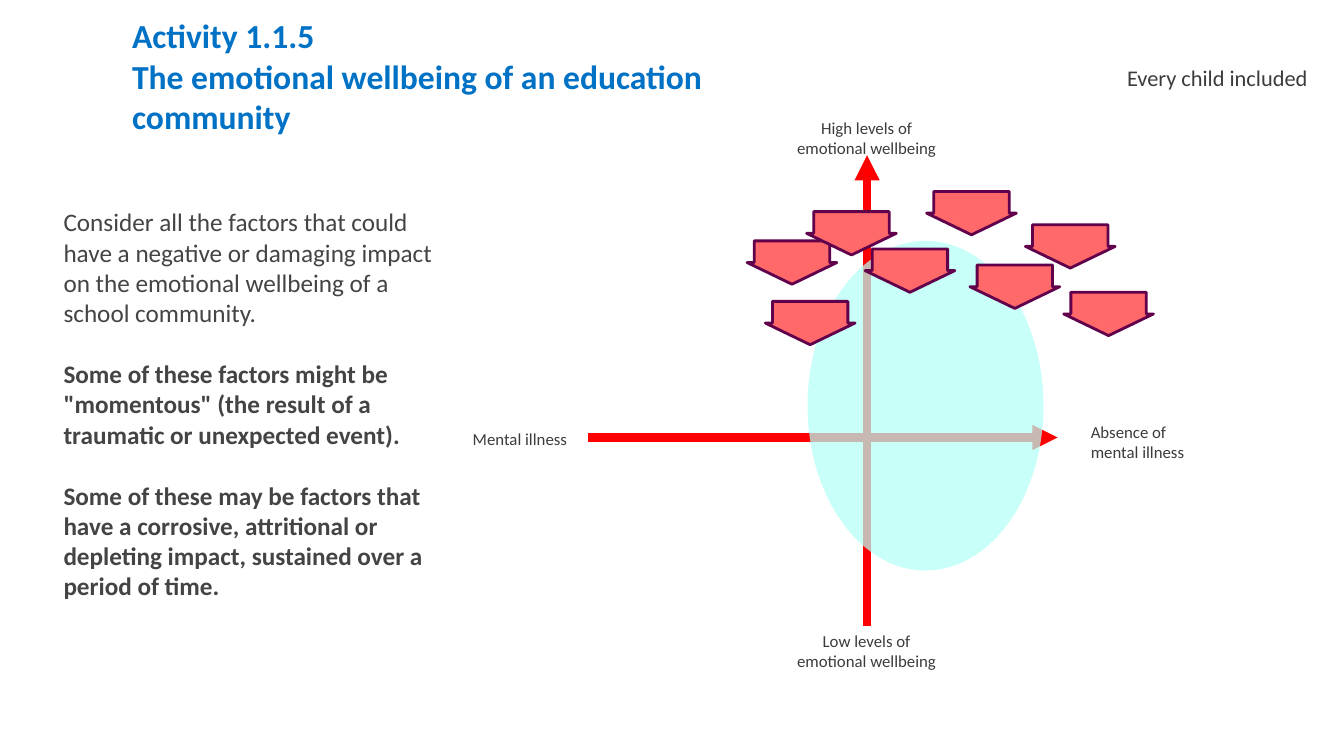
from dataclasses import dataclass

from lxml import etree
from pptx import Presentation
from pptx.dml.color import RGBColor
from pptx.enum.shapes import MSO_CONNECTOR as Connector, MSO_SHAPE as Preset
from pptx.enum.text import MSO_ANCHOR as Anchor, MSO_AUTO_SIZE as AutoSize, PP_ALIGN as Align
from pptx.oxml.ns import qn
from pptx.util import Inches, Pt

BLUE = RGBColor(0x00, 0x72, 0xC6)
DARK = RGBColor(0x3C, 0x3C, 0x3C)
GREY = RGBColor(0x44, 0x44, 0x44)
RED = RGBColor(0xFF, 0x00, 0x00)
AQUA = RGBColor(0xB4, 0xFF, 0xF8)
CORAL = RGBColor(0xFF, 0x69, 0x69)
PLUM = RGBColor(0x61, 0x00, 0x4B)


@dataclass
class Box:
    left: float
    top: float
    width: float
    height: float

    def lengths(self) -> list:
        return [Inches(n) for n in (self.left, self.top, self.width, self.height)]


@dataclass
class Label:
    text: str
    box: Box
    size: int = 12
    align: Align = Align.LEFT


@dataclass
class Axis:
    start: tuple[float, float]
    end: tuple[float, float]


LABELS = [
    Label("Every child included", Box(11.08, 0.59, 2.25, 0.37), 16),
    Label("Mental illness", Box(4.59, 4.2, 1.45, 0.3)),
    Label("Absence of mental illness", Box(10.72, 4.13, 1.45, 0.5)),
    Label("High levels of emotional wellbeing", Box(7.77, 1.12, 1.65, 0.5), align=Align.CENTER),
    Label("Low levels of emotional wellbeing", Box(7.77, 6.21, 1.65, 0.5), align=Align.CENTER),
]
AXES = [Axis((8.6, 6.21), (8.6, 1.54)), Axis((5.83, 4.34), (10.49, 4.34))]
PRESSURES = [(7.41, 2.39), (8, 2.1), (8.58, 2.47), (9.19, 1.9),
             (9.62, 2.63), (7.59, 2.99), (10.17, 2.23), (10.55, 2.9)]
TITLE = ["Activity 1.1.5", "The emotional wellbeing of an education community"]
FACTORS = [
    "Consider all the factors that could have a negative or damaging impact on the "
    "emotional wellbeing of a school community.",
    "Some of these factors might be \"momentous\" (the result of a traumatic or unexpected event).",
    "Some of these may be factors that have a corrosive, attritional or depleting impact, "
    "sustained over a period of time.",
]


def write(shape, lines: list[str], size: int, color: RGBColor,
          bold_from: int, gap: float = 0, align: Align = Align.LEFT) -> None:
    """Fill a shape with plain paragraphs, bold from the given index on."""
    frame = shape.text_frame
    frame_format = {
        "word_wrap": True, "auto_size": AutoSize.NONE, "vertical_anchor": Anchor.TOP,
        "margin_left": Inches(0.1), "margin_right": Inches(0.1),
        "margin_top": Inches(0.05), "margin_bottom": Inches(0.05),
    }
    for name, value in frame_format.items():
        setattr(frame, name, value)
    for index, line in enumerate(lines):
        para = frame.paragraphs[0] if index == 0 else frame.add_paragraph()
        properties = para._p.get_or_add_pPr()
        properties.set("marL", "0")
        properties.set("indent", "0")
        etree.SubElement(properties, qn("a:buNone"))
        para.alignment = align
        para.space_before = Pt(gap if index else 0)
        span = para.add_run()
        span.text = line
        span.font.color.rgb = color
        font_format = {"name": "Calibri", "size": Pt(size), "bold": index >= bold_from}
        for name, value in font_format.items():
            setattr(span.font, name, value)


def place(shape, box: Box) -> None:
    for name, value in zip(("left", "top", "width", "height"), box.lengths()):
        setattr(shape, name, value)


def draw_label(slide, label: Label) -> None:
    shape = slide.shapes.add_textbox(*label.box.lengths())
    write(shape, [label.text], label.size, DARK, bold_from=1, align=label.align)


def draw_axis(slide, axis: Axis) -> None:
    ends = [Inches(n) for n in (*axis.start, *axis.end)]
    arrow = slide.shapes.add_connector(Connector.STRAIGHT, *ends)
    arrow.line.color.rgb = RED
    arrow.line.width = Pt(6)
    etree.SubElement(arrow.line._get_or_add_ln(), qn("a:tailEnd"), type="triangle")
    etree.SubElement(arrow._element.spPr, qn("a:effectLst"))


def draw_shape(slide, preset: Preset, box: Box, fill: RGBColor):
    shape = slide.shapes.add_shape(preset, *box.lengths())
    shape.shadow.inherit = False
    shape.fill.solid()
    shape.fill.fore_color.rgb = fill
    shape.line.fill.background()
    return shape


def draw_community(slide) -> None:
    ellipse = draw_shape(slide, Preset.OVAL, Box(8.01, 2.39, 2.34, 3.27), AQUA)
    color = ellipse._element.spPr.find(f"{qn('a:solidFill')}/{qn('a:srgbClr')}")
    etree.SubElement(color, qn("a:alpha"), val="72000")


def draw_pressure(slide, left: float, top: float) -> None:
    arrow = draw_shape(slide, Preset.DOWN_ARROW, Box(left, top, 0.89, 0.43), CORAL)
    arrow.adjustments[0] = 0.84
    arrow.adjustments[1] = 0.5
    arrow.line.color.rgb = PLUM
    arrow.line.width = Pt(2)


def main() -> None:
    deck = Presentation()
    deck.slide_width, deck.slide_height = Inches(13.33), Inches(7.5)
    slide = deck.slides.add_slide(deck.slide_layouts[1])

    # Title and discussion text
    title, body = slide.shapes.title, slide.placeholders[1]
    place(title, Box(1.21, 0.1, 7.26, 1.31))
    write(title, TITLE, 24, BLUE, bold_from=0)
    place(body, Box(0.53, 2, 3.92, 4.34))
    write(body, FACTORS, 18, GREY, bold_from=1, gap=22)

    # Wellbeing axes and their labels
    for axis in AXES:
        draw_axis(slide, axis)
    for label in LABELS:
        draw_label(slide, label)

    # Community and the pressures bearing down on it
    draw_community(slide)
    for left, top in PRESSURES:
        draw_pressure(slide, left, top)

    deck.save("out.pptx")


if __name__ == "__main__":
    main()
